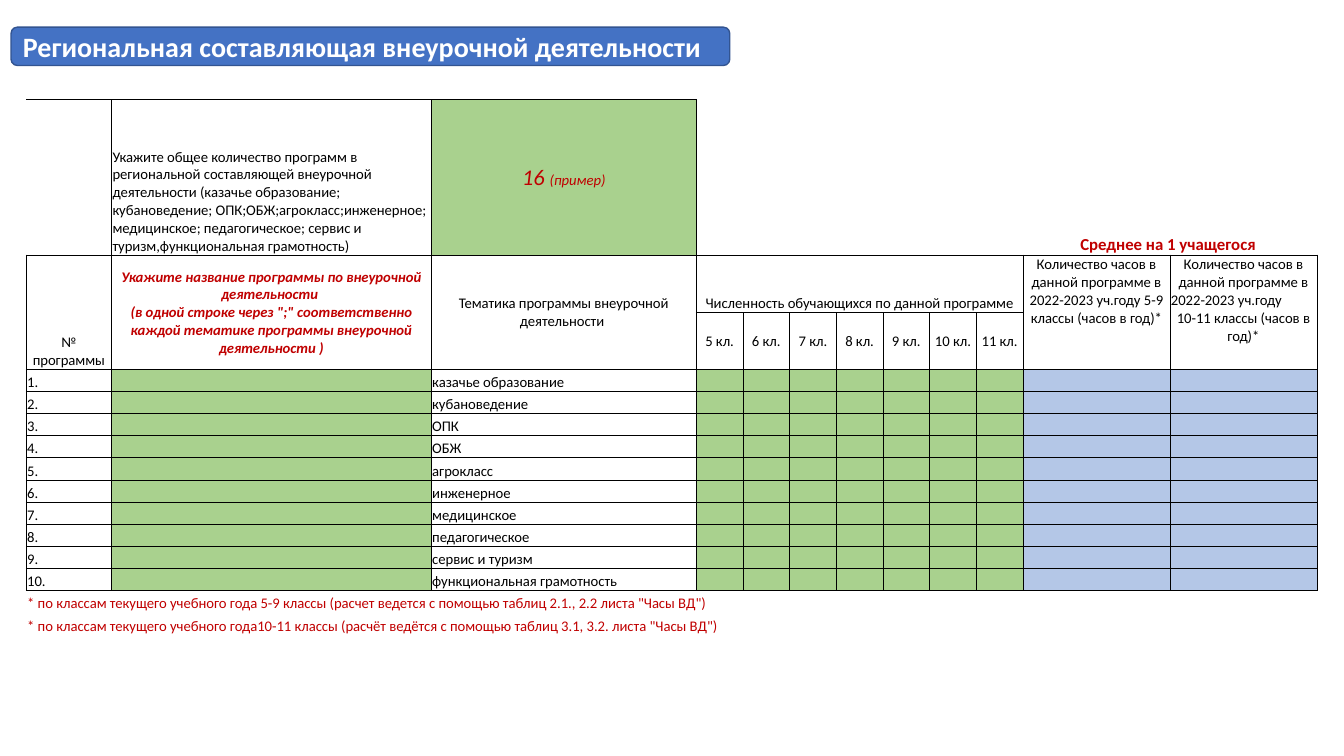
"""Build the slide on the regional component of extracurricular activities."""
from lxml.etree import SubElement
from pptx import Presentation
from pptx.dml.color import RGBColor as Rgb
from pptx.enum.shapes import MSO_SHAPE as Shape
from pptx.enum.text import MSO_ANCHOR as Anchor, PP_ALIGN as Align
from pptx.oxml.ns import qn
from pptx.util import Pt

COLORS = {"black": "000000", "white": "FFFFFF", "red": "C00000", "green": "A9D18E",
          "pale_blue": "B4C7E7", "blue": "4472C4", "dark_blue": "325491"}
NO_STYLE = "{2D5ABB26-0587-4C30-8999-92F81FD0307C}"
THEMES = ["казачье образование", "кубановедение", "ОПК", "ОБЖ", "агрокласс", "инженерное",
          "медицинское", "педагогическое", "сервис и туризм", "функциональная грамотность"]
GRADES = range(5, 12)
COLUMNS = [61, 228.4, 189.3] + [33.36] * len(GRADES) + [105, 105]
ROWS = [92.2, 111, 41, 40.6] + [15.84] * 13
TOTAL, HEADER, GRADE, FIRST, NOTES = 1, 2, 3, 4, 14
MERGES = [(0, 0, 0, 1), (TOTAL, 10, TOTAL, 11), (HEADER, 3, HEADER, 9),
          (NOTES, 0, NOTES, 3), (NOTES + 1, 0, NOTES + 1, 4)]
MERGES += [(HEADER, col, GRADE, col) for col in (0, 1, 2, 10, 11)]


def color(name):
    return Rgb.from_string(COLORS[name])


def write(frame, text, size=10.5, tint="black", bold=False, italic=False,
          align=Align.LEFT, same_line=False):
    paragraph = frame.paragraphs[-1]
    if paragraph.runs and not same_line:
        paragraph = frame.add_paragraph()
    paragraph.alignment = align
    run = paragraph.add_run()
    run.text = text
    font = run.font
    font.name, font.size, font.bold, font.italic = "Calibri", Pt(size), bold, italic
    font.color.rgb = color(tint)


def edges(row, col):
    if row == 0:
        return "B" if col < 3 else ""
    if row == TOTAL:
        return {0: "RTB", 1: "LRTB", 2: "LRTB", 3: "LB"}.get(col, "B")
    if row < NOTES:
        return "LRTB"
    return "T" if row == NOTES else ""


def fill_name(row, col):
    if (row, col) == (TOTAL, 2):
        return "green"
    if FIRST <= row < NOTES and col not in (0, 2):
        return "pale_blue" if col > 9 else "green"
    return None


class Board:
    """Holds the style and the current slide."""

    def __init__(self, deck):
        self.slide = deck.slides.add_slide(deck.slide_layouts[6])
        self.border = Pt(0.5)

    def banner(self, text, left, top, width, height):
        banner = self.slide.shapes.add_shape(
            Shape.ROUNDED_RECTANGLE, Pt(left), Pt(top), Pt(width), Pt(height))
        banner.shadow.inherit = False
        banner.fill.solid()
        banner.fill.fore_color.rgb = color("blue")
        banner.line.color.rgb = color("dark_blue")
        banner.line.width = Pt(1)
        banner.text_frame.vertical_anchor = Anchor.MIDDLE
        write(banner.text_frame, text, size=20, tint="white", bold=True)

    def table(self, left, top):
        table = self.slide.shapes.add_table(
            len(ROWS), len(COLUMNS), Pt(left), Pt(top), Pt(sum(COLUMNS)), Pt(sum(ROWS))).table
        table.first_row = table.horz_banding = False
        table._tbl.tblPr.find(qn("a:tableStyleId")).text = NO_STYLE
        for column, width in zip(table.columns, COLUMNS):
            column.width = Pt(width)
        for row, height in zip(table.rows, ROWS):
            row.height = Pt(height)
        for row in range(len(ROWS)):
            for col in range(len(COLUMNS)):
                self.style_cell(table.cell(row, col), edges(row, col), fill_name(row, col))
        for top_row, left_col, bottom_row, right_col in MERGES:
            table.cell(top_row, left_col).merge(table.cell(bottom_row, right_col))
        return table

    def style_cell(self, cell, sides, fill):
        cell.margin_left = cell.margin_right = cell.margin_top = Pt(0.7)
        cell.margin_bottom = 0
        properties = cell._tc.get_or_add_tcPr()
        for side in "LRTB":
            line = SubElement(properties, qn("a:ln" + side), w=str(self.border))
            if side in sides:
                paint = SubElement(line, qn("a:solidFill"))
                SubElement(paint, qn("a:srgbClr"), val=COLORS["black"])
            else:
                SubElement(line, qn("a:noFill"))
        if fill:
            cell.fill.solid()
            cell.fill.fore_color.rgb = color(fill)
        else:
            cell.fill.background()
        SubElement(cell.text_frame.paragraphs[0]._p, qn("a:endParaRPr"), sz="1050")

    def entry(self, cell, *lines, anchor=Anchor.BOTTOM, **style):
        cell.vertical_anchor = anchor
        for line in lines:
            write(cell.text_frame, line, **style)


def main():
    deck = Presentation()
    deck.slide_width, deck.slide_height = Pt(960), Pt(540)
    board = Board(deck)
    programs = board.table(18.7, -21)
    cell, entry = programs.cell, board.entry
    centred = {"align": Align.CENTER}
    middle = {"anchor": Anchor.MIDDLE, **centred}

    entry(cell(TOTAL, 1), "Укажите общее количество программ в региональной составляющей внеурочной "
          "деятельности (казачье образование; кубановедение; ОПК;ОБЖ;агрокласс;инженерное; "
          "медицинское; педагогическое; сервис и туризм,функциональная грамотность)")
    example = cell(TOTAL, 2)
    entry(example, "16 ", size=16, tint="red", italic=True, **middle)
    write(example.text_frame, "(пример)", tint="red", italic=True, same_line=True, **centred)
    entry(cell(TOTAL, 10), "Среднее на 1 учащегося ", size=12, tint="red", bold=True, **centred)

    entry(cell(HEADER, 0), "№ программы", **centred)
    entry(cell(HEADER, 1), "Укажите название программы по внеурочной деятельности ",
          "(в одной строке через \";\" соответственно каждой тематике программы внеурочной "
          "деятельности )", tint="red", bold=True, italic=True, **middle)
    entry(cell(HEADER, 2), "Тематика программы внеурочной деятельности ", **middle)
    entry(cell(HEADER, 3), "Численность обучающихся по данной программе", **centred)
    entry(cell(HEADER, 10), "Количество часов в данной программе в 2022-2023 уч.году 5-9 классы "
          "(часов в год)*", anchor=Anchor.TOP, **centred)
    senior_hours = cell(HEADER, 11)
    entry(senior_hours, "Количество часов в данной программе в", anchor=Anchor.TOP, **centred)
    write(senior_hours.text_frame, "2022-2023 уч.году")
    write(senior_hours.text_frame, "10-11 классы (часов в год)*", **centred)

    for col, grade in enumerate(GRADES, 3):
        entry(cell(GRADE, col), f"{grade} кл.", **middle)
    for number, theme in enumerate(THEMES, 1):
        row = FIRST + number - 1
        entry(cell(row, 0), f"{number}.")
        entry(cell(row, 2), theme)

    entry(cell(NOTES, 0), "* по классам текущего учебного года 5-9 классы (расчет ведется с помощью "
          "таблиц 2.1., 2.2 листа \"Часы ВД\")", tint="red")
    entry(cell(NOTES + 1, 0), "* по классам текущего учебного года10-11 классы (расчёт ведётся с "
          "помощью таблиц 3.1, 3.2. листа \"Часы ВД\")", tint="red")

    board.banner("Региональная составляющая внеурочной деятельности", 7.9, 19.4, 513.4, 27.4)
    deck.save("out.pptx")


if __name__ == "__main__":
    main()
